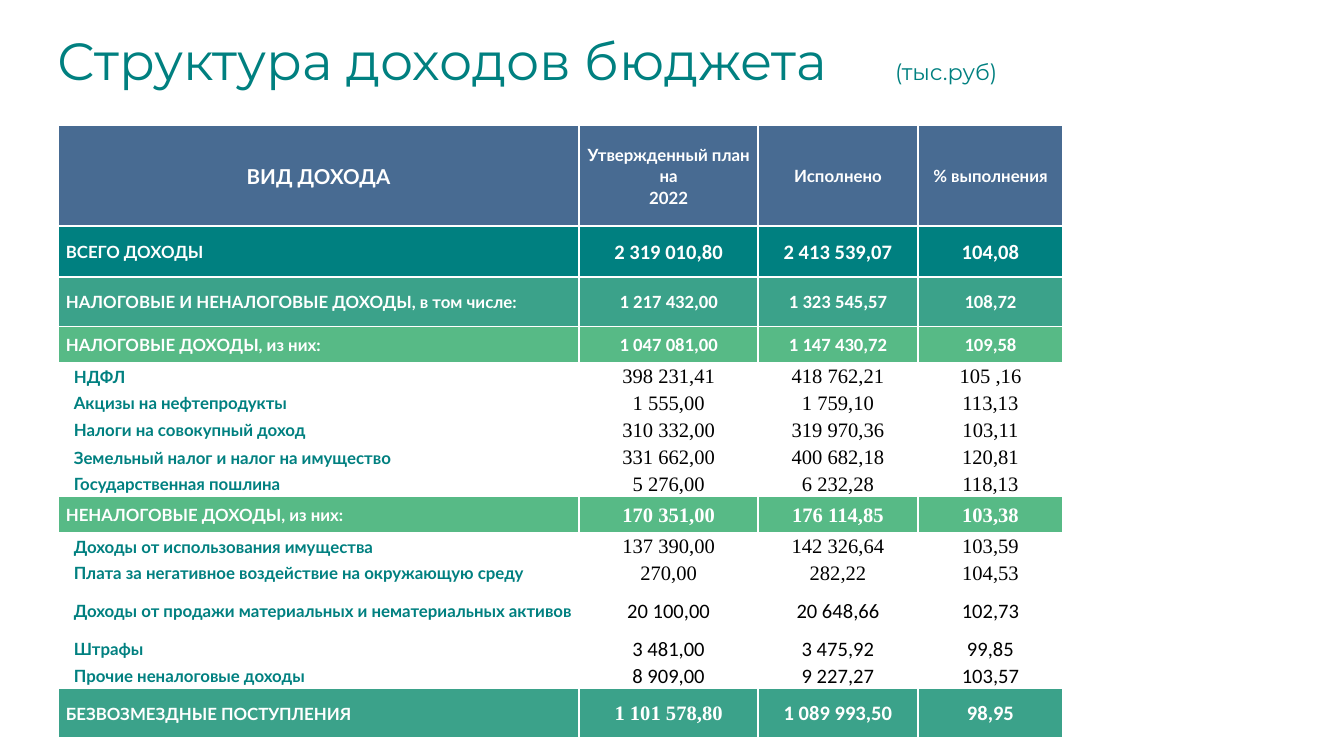
from typing import NamedTuple

from lxml import etree
from pptx import Presentation, util as u
from pptx.dml.color import RGBColor
from pptx.enum import text as t
from pptx.oxml.ns import qn

TEAL, GREEN, LIGHT_GREEN, BLUE = "008080", "3BA28A", "57BA86", "486B92"
WHITE, BLACK = "FFFFFF", "000000"
LATO, CALIBRI, TIMES = "Lato", "Calibri", "Times New Roman"
COLUMN_WIDTHS = (3.88, 1.33, 1.19, 1.08)


class IncomeRow(NamedTuple):
    """A table row; rows without a fill are indented detail lines."""
    height: float
    cells: tuple[str, ...]
    fill: str = ""
    value_font: str = TIMES
    value_size: float = 11
    label_size: float = 9
    label_align: t.PP_ALIGN = t.PP_ALIGN.LEFT


HEADER = IncomeRow(
    0.75, ("ВИД ДОХОДА", "Утвержденный план на\n2022", "Исполнено", "% выполнения"),
    BLUE, LATO, 9, 11, t.PP_ALIGN.CENTER)

ROWS = [
    HEADER,
    IncomeRow(0.38, ("ВСЕГО ДОХОДЫ", "2 319 010,80", "2 413 539,07", "104,08"),
              TEAL, CALIBRI),
    IncomeRow(0.37, ("НАЛОГОВЫЕ И НЕНАЛОГОВЫЕ ДОХОДЫ, в том числе:",
                     "1 217 432,00", "1 323 545,57", "108,72"), GREEN, CALIBRI, 10),
    IncomeRow(0.27, ("НАЛОГОВЫЕ ДОХОДЫ, из них:",
                     "1 047 081,00", "1 147 430,72", "109,58"), LIGHT_GREEN, CALIBRI, 10),
    IncomeRow(0.19, ("НДФЛ", "398 231,41", "418 762,21", "105 ,16")),
    IncomeRow(0.19, ("Акцизы на нефтепродукты", "1 555,00", "1 759,10", "113,13")),
    IncomeRow(0.21, ("Налоги на совокупный доход", "310 332,00", "319 970,36", "103,11")),
    IncomeRow(0.19, ("Земельный налог и налог на имущество",
                     "331 662,00", "400 682,18", "120,81")),
    IncomeRow(0.19, ("Государственная пошлина", "5 276,00", "6 232,28", "118,13")),
    IncomeRow(0.27, ("НЕНАЛОГОВЫЕ ДОХОДЫ, из них:",
                     "170 351,00", "176 114,85", "103,38"), LIGHT_GREEN),
    IncomeRow(0.19, ("Доходы от использования имущества",
                     "137 390,00", "142 326,64", "103,59")),
    IncomeRow(0.18, ("Плата за негативное воздействие на окружающую среду",
                     "270,00", "282,22", "104,53")),
    IncomeRow(0.37, ("Доходы от продажи материальных и нематериальных активов",
                     "20 100,00", "20 648,66", "102,73"), value_font=CALIBRI),
    IncomeRow(0.19, ("Штрафы", "3 481,00", "3 475,92", "99,85"), value_font=CALIBRI),
    IncomeRow(0.19, ("Прочие неналоговые доходы", "8 909,00", "9 227,27", "103,57"),
              value_font=CALIBRI),
    IncomeRow(0.37, ("БЕЗВОЗМЕЗДНЫЕ ПОСТУПЛЕНИЯ",
                     "1 101 578,80", "1 089 993,50", "98,95"), GREEN, CALIBRI),
]


def color(hex_value: str) -> RGBColor:
    return RGBColor.from_string(hex_value)


def apply(target, values: dict) -> None:
    for name, value in values.items():
        setattr(target, name, value)


def add_span(para, content: str, font: str, size: float, ink: str,
             bold: bool = False) -> None:
    span = para.add_run()
    span.text = content
    apply(span.font, {"name": font, "size": u.Pt(size), "bold": bold})
    span.font.color.rgb = color(ink)


def add_title(page) -> None:
    box = page.shapes.add_textbox(*map(u.Inches, (0.43, 0.25, 8.91, 0.39)))
    apply(box.text_frame, {
        "word_wrap": True, "vertical_anchor": t.MSO_ANCHOR.MIDDLE,
        "margin_left": 0, "margin_right": 0, "margin_top": 0, "margin_bottom": 0})
    para = box.text_frame.paragraphs[0]
    # Tab stop that places the unit after the title
    tabs = etree.SubElement(para._p.get_or_add_pPr(), qn("a:tabLst"))
    etree.SubElement(tabs, qn("a:tab"), pos=str(u.Inches(6.23)), algn="l")
    add_span(para, "Структура доходов бюджета", "Montserrat", 28, TEAL)
    add_span(para, "\t(тыс.руб)", "Montserrat", 12, TEAL)


def add_borders(cell, ink: str = WHITE, width: float = 1) -> None:
    """Put the four border lines ahead of the cell's fill."""
    properties = cell._tc.get_or_add_tcPr()
    for index, side in enumerate(("lnL", "lnR", "lnT", "lnB")):
        line = etree.Element(qn(f"a:{side}"), w=str(u.Pt(width)))
        fill = etree.SubElement(line, qn("a:solidFill"))
        etree.SubElement(fill, qn("a:srgbClr"), val=ink)
        properties.insert(index, line)


def fill_cell(cell, row: IncomeRow, column: int) -> None:
    is_label = column == 0
    is_detail = not row.fill
    apply(cell, {
        "vertical_anchor": t.MSO_ANCHOR.MIDDLE,
        "margin_left": u.Inches(0.12 if is_label and is_detail else 0.06),
        "margin_right": u.Inches(0.03 if is_label and is_detail else 0.06),
        "margin_top": 0, "margin_bottom": 0})
    if is_detail:
        cell.fill.background()
    else:
        cell.fill.solid()
        cell.fill.fore_color.rgb = color(row.fill)
    add_borders(cell)

    if is_label:
        font, size, align = LATO, row.label_size, row.label_align
        ink = TEAL if is_detail else WHITE
    else:
        font, size, align = row.value_font, row.value_size, t.PP_ALIGN.CENTER
        ink = BLACK if is_detail else WHITE
    frame = cell.text_frame
    for index, content in enumerate(row.cells[column].split("\n")):
        para = frame.add_paragraph() if index else frame.paragraphs[0]
        apply(para, {"alignment": align, "line_spacing": 1.07})
        add_span(para, content, font, size, ink, is_label or not is_detail)


def add_income_table(page) -> None:
    size = (sum(COLUMN_WIDTHS), sum(row.height for row in ROWS))
    table = page.shapes.add_table(
        len(ROWS), len(COLUMN_WIDTHS), *map(u.Inches, (0.43, 0.93, *size))).table
    apply(table, {"first_row": False, "horz_banding": False})
    for column, width in zip(table.columns, COLUMN_WIDTHS):
        column.width = u.Inches(width)
    for row_index, row in enumerate(ROWS):
        table.rows[row_index].height = u.Inches(row.height)
        for column_index in range(len(COLUMN_WIDTHS)):
            fill_cell(table.cell(row_index, column_index), row, column_index)
    # The plan total of the last row has a serif face
    table.cell(len(ROWS) - 1, 1).text_frame.paragraphs[0].runs[0].font.name = TIMES


def main() -> None:
    deck = Presentation()
    # Widescreen page, 16:9
    width = u.Inches(10)
    apply(deck, {"slide_width": width, "slide_height": width * 9 // 16})
    page = deck.slides.add_slide(deck.slide_layouts[6])
    add_title(page)
    add_income_table(page)
    deck.save("out.pptx")


if __name__ == "__main__":
    main()
